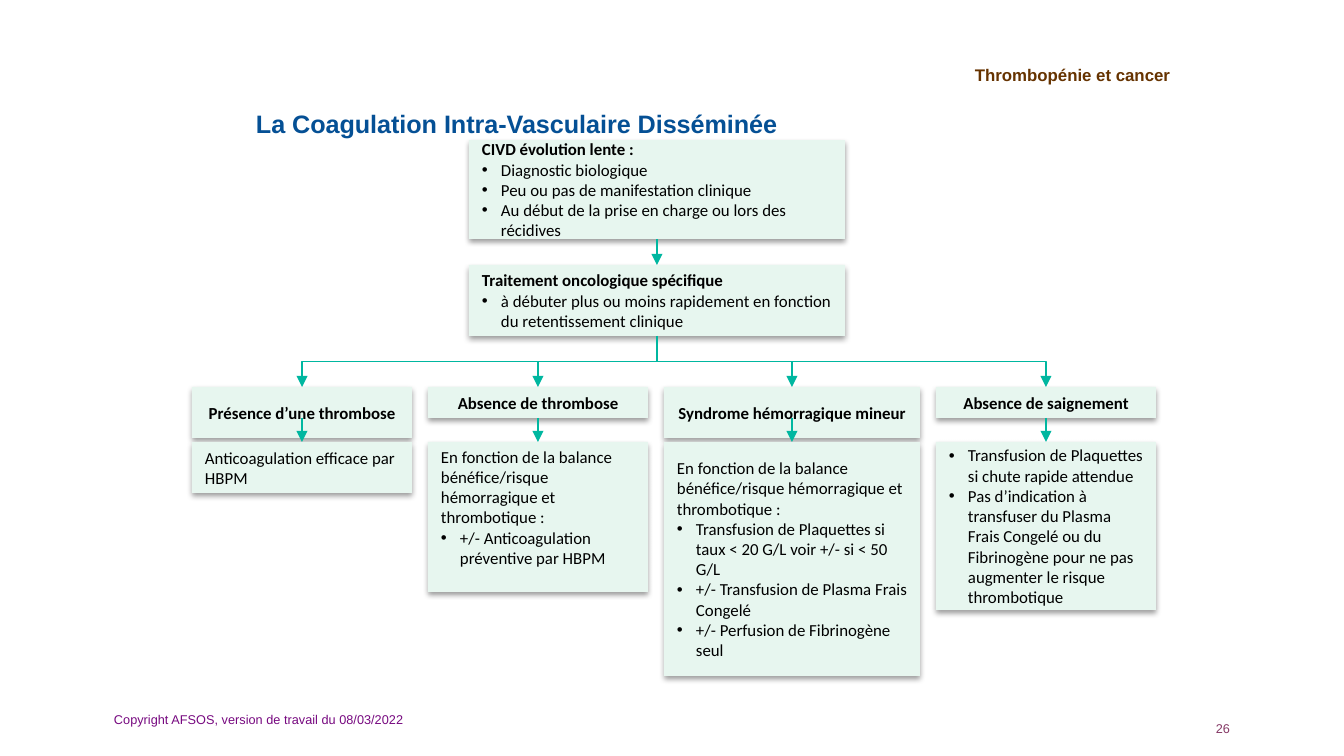
"""Build the slide on slowly evolving disseminated intravascular coagulation."""
from lxml import etree
from pptx import Presentation
from pptx.dml.color import RGBColor
from pptx.enum.shapes import MSO_CONNECTOR, MSO_SHAPE
from pptx.enum.text import MSO_ANCHOR, PP_ALIGN
from pptx.oxml.ns import qn
from pptx.util import Inches, Pt

LEFT, CENTER, RIGHT = PP_ALIGN.LEFT, PP_ALIGN.CENTER, PP_ALIGN.RIGHT
TOP, MIDDLE = MSO_ANCHOR.TOP, MSO_ANCHOR.MIDDLE
STRAIGHT, ELBOW = MSO_CONNECTOR.STRAIGHT, MSO_CONNECTOR.ELBOW
RECTANGLE = MSO_SHAPE.RECTANGLE

BLACK = RGBColor(0x00, 0x00, 0x00)
BROWN = RGBColor(0x66, 0x33, 0x00)
BLUE = RGBColor(0x05, 0x50, 0x95)
PLUM = RGBColor(0x86, 0x39, 0x66)
PURPLE = RGBColor(0x77, 0x09, 0x80)
MINT = RGBColor(0xE7, 0xF6, 0xEF)
TEAL = RGBColor(0x00, 0xB7, 0xA0)

SCALE = Inches(10) / 1344
INDENT = 19
INSET_X, INSET_Y = 13, 7

LABELS = [
    ("Thrombopénie et cancer", (789, 45, 394, 60),
     dict(size=9, color=BROWN, bold=True, align=RIGHT)),
    ("La Coagulation Intra-Vasculaire Disséminée", (243, 77, 858, 92),
     dict(size=13.5, color=BLUE, bold=True)),
    ("26", (964, 714, 279, 26), dict(size=6.8, color=PLUM, align=RIGHT, anchor=TOP)),
    ("Copyright AFSOS, version de travail du 08/03/2022", (101, 699, 454, 41),
     dict(size=6.8, color=PURPLE)),
]

STEPS = [
    (140, 99, "CIVD évolution lente :", [
        "Diagnostic biologique",
        "Peu ou pas de manifestation clinique",
        "Au début de la prise en charge ou lors des récidives"]),
    (265, 71, "Traitement oncologique spécifique", [
        "à débuter plus ou moins rapidement en fonction du retentissement clinique"]),
]

BALANCE = "En fonction de la balance bénéfice/risque hémorragique et thrombotique :"
BRANCHES = [
    dict(width=220, heading="Présence d’une thrombose", heading_height=51,
         intro="Anticoagulation efficace par HBPM", bullets=[], height=51),
    dict(width=220, heading="Absence de thrombose", heading_height=31,
         intro=BALANCE, bullets=["+/- Anticoagulation préventive par HBPM"],
         height=150, bottom=27),
    dict(width=256, heading="Syndrome hémorragique mineur", heading_height=51,
         intro=BALANCE, height=234, bullets=[
             "Transfusion de Plaquettes si taux < 20 G/L voir +/- si < 50 G/L",
             "+/- Transfusion de Plasma Frais Congelé",
             "+/- Perfusion de Fibrinogène seul"]),
    dict(width=220, heading="Absence de saignement", heading_height=31,
         intro="", height=168, bullets=[
             "Transfusion de Plaquettes si chute rapide attendue",
             "Pas d’indication à transfuser du Plasma Frais Congelé ou du "
             "Fibrinogène pour ne pas augmenter le risque thrombotique"]),
]

STEP_LEFT, STEP_WIDTH = 469, 376
STEP_CENTER = STEP_LEFT + STEP_WIDTH / 2
BRANCH_LEFT, BRANCH_GAP = 192, 16
HEADING_TOP, ARROW_TOP, BODY_TOP = 387, 418, 442


def px(*values):
    return [round(value * SCALE) for value in values]


def add_bullet(paragraph):
    properties = paragraph._p.get_or_add_pPr()
    indent, = px(INDENT)
    properties.set("marL", str(indent))
    properties.set("indent", str(-indent))
    etree.SubElement(properties, qn("a:buFont"), typeface="Arial")
    etree.SubElement(properties, qn("a:buChar"), char="•")


def write(shape, heading="", intro="", bullets=(), font="Arial", size=9, color=BLACK,
          bold=False, align=LEFT, anchor=MIDDLE, bottom=INSET_Y):
    frame = shape.text_frame
    frame.word_wrap = True
    frame.vertical_anchor = anchor
    frame.margin_left, frame.margin_right = px(INSET_X, INSET_X)
    frame.margin_top, frame.margin_bottom = px(INSET_Y, bottom)
    lines = [(heading, True, False), (intro, bold, False)]
    lines += [(text, False, True) for text in bullets]
    lines = [line for line in lines if line[0]]
    for index, (text, is_bold, is_bullet) in enumerate(lines):
        paragraph = frame.add_paragraph() if index else frame.paragraphs[0]
        paragraph.alignment = align
        if is_bullet:
            add_bullet(paragraph)
        run = paragraph.add_run()
        run.text = text
        run.font.name, run.font.size, run.font.bold = font, Pt(size), is_bold
        run.font.color.rgb = color


def add_box(slide, area, **content):
    shape = slide.shapes.add_shape(RECTANGLE, *px(*area))
    shape.fill.solid()
    shape.fill.fore_color.rgb = MINT
    shape.line.fill.background()
    shape.shadow.inherit = False
    effects = shape._element.spPr.find(qn("a:effectLst"))
    shadow = etree.SubElement(effects, qn("a:outerShdw"), blurRad=str(Pt(3.1)),
                              dist=str(Pt(1.6)), dir="5400000", rotWithShape="0")
    shade = etree.SubElement(shadow, qn("a:srgbClr"), val=str(BLACK))
    etree.SubElement(shade, qn("a:alpha"), val="38000")
    write(shape, font="Calibri", **content)


def add_arrow(slide, kind, *ends):
    connector = slide.shapes.add_connector(kind, *px(*ends))
    connector.line.color.rgb = TEAL
    connector.line.width = Pt(0.75)
    etree.SubElement(connector.line._get_or_add_ln(), qn("a:tailEnd"), type="triangle")
    etree.SubElement(connector._element.spPr, qn("a:effectLst"))
    return connector


def add_elbow(slide, start_x, start_y, end_x, end_y):
    middle_x, middle_y = (start_x + end_x) / 2, (start_y + end_y) / 2
    side = 1 if end_x < start_x else -1
    half_width = side * (end_y - start_y) / 2
    half_height = abs(end_x - start_x) / 2
    connector = add_arrow(slide, ELBOW, middle_x - half_width, middle_y - half_height,
                          middle_x + half_width, middle_y + half_height)
    transform = connector._element.spPr.find(qn("a:xfrm"))
    transform.set("rot", str(90 * side % 360 * 60000))


def main():
    presentation = Presentation()
    presentation.slide_width, presentation.slide_height = px(1344, 756)
    slide = presentation.slides.add_slide(presentation.slide_layouts[6])

    for text, area, style in LABELS:
        write(slide.shapes.add_textbox(*px(*area)), intro=text, **style)

    for top, height, heading, bullets in STEPS:
        add_box(slide, (STEP_LEFT, top, STEP_WIDTH, height),
                heading=heading, bullets=bullets)
    first_bottom, last_bottom = [top + height for top, height, *_ in STEPS]
    add_arrow(slide, STRAIGHT, STEP_CENTER, first_bottom, STEP_CENTER, STEPS[1][0])

    left = BRANCH_LEFT
    for index, branch in enumerate(BRANCHES):
        width = branch["width"]
        center = left + width / 2
        add_box(slide, (left, HEADING_TOP, width, branch["heading_height"]),
                heading=branch["heading"], align=CENTER)
        add_box(slide, (left, BODY_TOP, width, branch["height"]), intro=branch["intro"],
                bullets=branch["bullets"], bottom=branch.get("bottom", INSET_Y))
        add_arrow(slide, STRAIGHT, center, ARROW_TOP, center, BODY_TOP)
        if index in (0, len(BRANCHES) - 1):
            add_elbow(slide, STEP_CENTER, last_bottom, center, HEADING_TOP)
        else:
            add_arrow(slide, STRAIGHT, center, (last_bottom + HEADING_TOP) / 2,
                      center, HEADING_TOP)
        left += width + BRANCH_GAP

    presentation.save("out.pptx")


if __name__ == "__main__":
    main()
